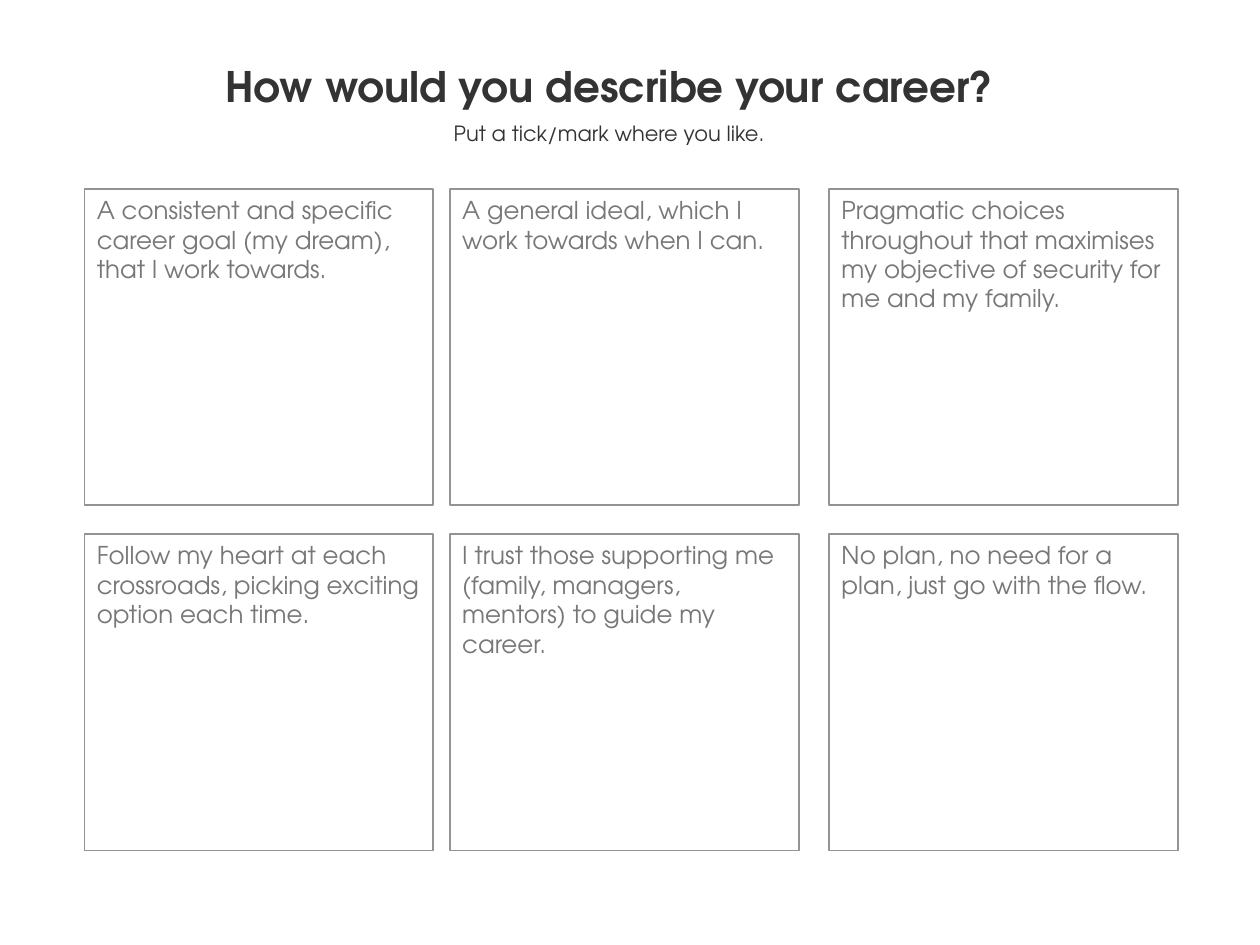
from pptx import Presentation
from pptx.dml.color import RGBColor
from pptx.enum.shapes import MSO_SHAPE
from pptx.enum.text import MSO_ANCHOR, MSO_AUTO_SIZE, PP_ALIGN
from pptx.oxml import parse_xml
from pptx.oxml.ns import nsdecls
from pptx.util import Inches, Pt

# Grid of answer boxes, in inches
COLUMNS = (0.67, 3.57, 6.58)
ROWS = (1.5, 4.24)
BOX_W, BOX_H = 2.77, 2.51
HEAD_LEFT, HEAD_W = 0.42, 8.83

ANSWERS = (
    ("A consistent and specific career goal (my dream), that I work towards.",
     "A general ideal, which I work towards when I can.",
     "Pragmatic choices throughout that maximises my objective of security "
     "for me and my family."),
    ("Follow my heart at each crossroads, picking exciting option each time.",
     "I trust those supporting me (family, managers, mentors) to guide my career.",
     "No plan, no need for a plan, just go with the flow."),
)


def rgb(value):
    return RGBColor.from_string(value)


class CareerSlide:
    FONT = "TeX Gyre Adventor"
    WHITE, DARK, GREY, BORDER = "FFFFFF", "333333", "777777", "939393"
    OUTLINE = "C4C4C4"

    def __init__(self, prs):
        self.s = prs.slides.add_slide(prs.slide_layouts[6])

    def panel(self, left, top, width, height, text, color, align, **font):
        """White rectangle holding one paragraph of text."""
        sp = self.s.shapes.add_shape(
            MSO_SHAPE.RECTANGLE, *map(Inches, (left, top, width, height)))
        sp.shadow.inherit = False
        sp.fill.solid()
        sp.fill.fore_color.rgb = rgb(self.WHITE)
        sp.line.fill.background()
        tf = sp.text_frame
        tf.word_wrap = True
        tf.vertical_anchor = MSO_ANCHOR.TOP
        p = tf.paragraphs[0]
        p.alignment = align
        r = p.add_run()
        r.text = text
        for name, value in {"name": self.FONT, **font}.items():
            setattr(r.font, name, value)
        r.font.color.rgb = rgb(color)
        return sp

    def heading(self, top, height, text, **font):
        sp = self.panel(HEAD_LEFT, top, HEAD_W, height, text, self.DARK,
                        PP_ALIGN.CENTER, **font)
        sp.text_frame.auto_size = MSO_AUTO_SIZE.SHAPE_TO_FIT_TEXT
        return sp

    def title(self, top, height, text):
        sp = self.heading(top, height, text, size=Pt(24), bold=True)
        # Thin outline around the letters
        r = sp.text_frame.paragraphs[0].runs[0]
        r.font._element.insert(0, parse_xml(
            f'<a:ln {nsdecls("a")} w="{Pt(0.75)}"><a:solidFill>'
            f'<a:srgbClr val="{self.OUTLINE}"/></a:solidFill></a:ln>'))

    def answer(self, column, row, text):
        sp = self.panel(COLUMNS[column], ROWS[row], BOX_W, BOX_H, text,
                        self.GREY, PP_ALIGN.LEFT, size=Pt(14))
        sp.line.color.rgb = rgb(self.BORDER)
        sp.line.width = Pt(1)


def main():
    prs = Presentation()
    prs.slide_width, prs.slide_height = Inches(10), Inches(7.5)
    slide = CareerSlide(prs)

    # Question and instruction
    slide.title(0.43, 0.5, "How would you describe your career?")
    slide.heading(0.91, 0.3, "Put a tick/mark where you like.", size=Pt(12))

    # Answer boxes
    for row, texts in enumerate(ANSWERS):
        for column, text in enumerate(texts):
            slide.answer(column, row, text)

    prs.save("out.pptx")


if __name__ == "__main__":
    main()
